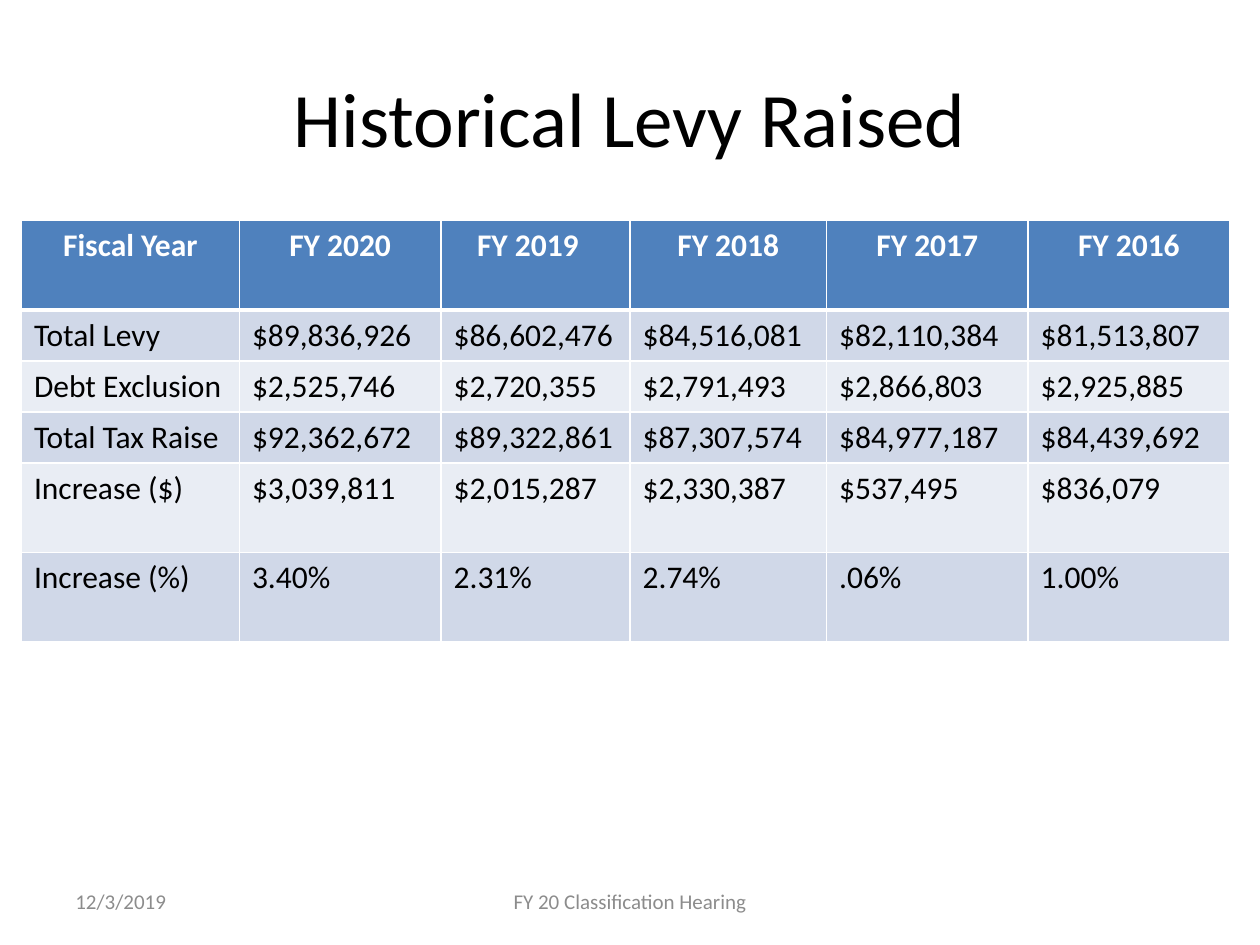
import pptx
import pptx.util
import pptx.dml.color
import pptx.enum.text
import lxml.etree

ALIGN = pptx.enum.text.PP_ALIGN
MID = pptx.enum.text.MSO_ANCHOR.MIDDLE
NS = "http://schemas.openxmlformats.org/drawingml/2006/main"
COLS, ROWS = 200, 150
WIDE, HIGH = pptx.util.Inches(10), pptx.util.Inches(7.5)

HEAD = {"size": pptx.util.Pt(18), "bold": True, "name": "Calibri"}
BODY = {**HEAD, "bold": False}
TITLE = {**BODY, "size": pptx.util.Pt(44)}
FOOT = {**BODY, "size": pptx.util.Pt(12)}

SPANS = [34.6, 32, 30, 31.2, 32, 32]
DEPTHS = [14.2, 8.1, 8.1, 8.1, 14.2, 14.2]
DATA = [
    ["Fiscal Year", "FY 2020", "FY 2019", "FY 2018", "FY 2017", "FY 2016"],
    ["Total Levy", "$89,836,926", "$86,602,476", "$84,516,081", "$82,110,384", "$81,513,807"],
    ["Debt Exclusion", "$2,525,746", "$2,720,355", "$2,791,493", "$2,866,803", "$2,925,885"],
    ["Total Tax Raise", "$92,362,672", "$89,322,861", "$87,307,574", "$84,977,187", "$84,439,692"],
    ["Increase ($)", "$3,039,811", "$2,015,287", "$2,330,387", "$537,495", "$836,079"],
    ["Increase (%)", "3.40%", "2.31%", "2.74%", ".06%", "1.00%"],
]


def color(code):
    return pptx.dml.color.RGBColor.from_string(code)


def across(n):
    return round(WIDE * n / COLS)


def down(n):
    return round(HIGH * n / ROWS)


def place(box):
    x, y, w, h = box
    return across(x), down(y), across(w), down(h)


def write(frame, text, form, code, align):
    para = frame.paragraphs[0]
    para.alignment = align
    run = para.add_run()
    run.text = text
    for key, value in form.items():
        setattr(run.font, key, value)
    run.font.color.rgb = color(code)


def label(slide, box, text, form, code, align):
    frame = slide.shapes.add_textbox(*place(box)).text_frame
    frame.word_wrap = True
    frame.vertical_anchor = MID
    write(frame, text, form, code, align)


def border(cell, widths):
    props = cell._tc.get_or_add_tcPr()
    for side, width in widths.items():
        line = lxml.etree.SubElement(props, f"{{{NS}}}ln{side}", w=str(pptx.util.Pt(width)))
        fill = lxml.etree.SubElement(line, f"{{{NS}}}solidFill")
        lxml.etree.SubElement(fill, f"{{{NS}}}srgbClr", val="FFFFFF")


def levy(slide, box):
    table = slide.shapes.add_table(len(DATA), len(SPANS), *place(box)).table
    for col, span in zip(table.columns, SPANS):
        col.width = across(span)
    for row, depth in zip(table.rows, DEPTHS):
        row.height = down(depth)
    for r, texts in enumerate(DATA):
        top = r == 0
        form, code, align = (HEAD, "FFFFFF", ALIGN.CENTER) if top else (BODY, "000000", ALIGN.LEFT)
        shade = "4F81BD" if top else ("E9EDF4", "D0D8E8")[r % 2]
        for c, text in enumerate(texts):
            cell = table.cell(r, c)
            border(cell, {"L": 1, "R": 1, "T": 3 if r == 1 else 1, "B": 3 if top else 1})
            cell.fill.solid()
            cell.fill.fore_color.rgb = color(shade)
            write(cell.text_frame, text, form, code, align)
    table.cell(0, 2).margin_right = across(4.4)


def footer(slide, box):
    x, y, w, h = box
    label(slide, (x, y, 46.6, h), "12/3/2019", FOOT, "8C8C8C", ALIGN.LEFT)
    label(slide, (x + (w - 63.4) / 2, y, 63.4, h), "FY 20 Classification Hearing",
          FOOT, "8C8C8C", ALIGN.CENTER)


def main():
    deck = pptx.Presentation()
    deck.slide_width, deck.slide_height = WIDE, HIGH
    slide = deck.slides.add_slide(deck.slide_layouts[6])
    label(slide, (10, 6, 180, 25), "Historical Levy Raised", TITLE, "000000", ALIGN.CENTER)
    levy(slide, (3.4, 35, sum(SPANS), sum(DEPTHS)))
    footer(slide, (10, 139, 180, 8))
    deck.save("out.pptx")


if __name__ == "__main__":
    main()
